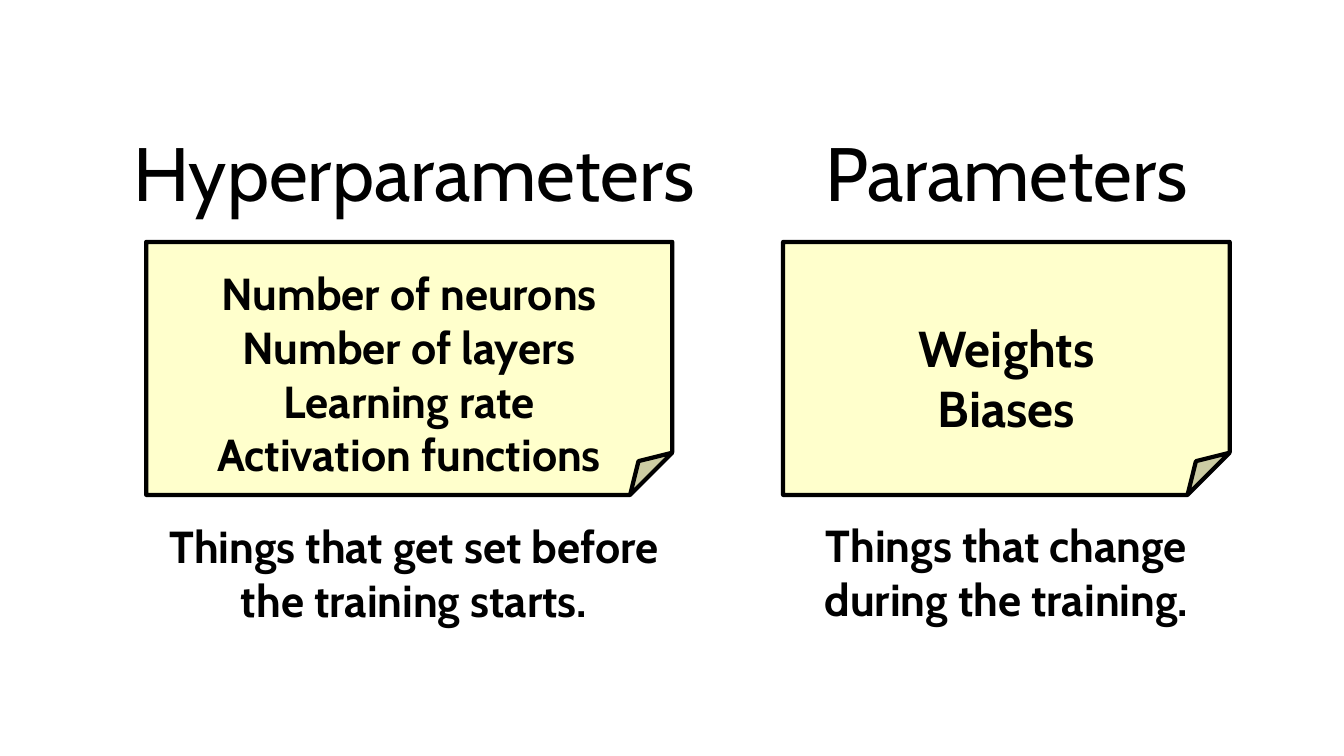
from pptx import Presentation
from pptx.dml.color import RGBColor
from pptx.enum.shapes import MSO_SHAPE
from pptx.enum.text import MSO_ANCHOR, PP_ALIGN
from pptx.util import Pt

COLORS = {"ink": "000000", "note": "FFFFCC"}


class PageBuilder:
    """Draws headings, captions and folded notes on one page in a shared style."""

    def __init__(self, page, font="Cabin"):
        self.page = page
        self.font = font

    def color(self, name):
        return RGBColor.from_string(COLORS[name])

    def add_lines(self, frame, lines, size, bold):
        for index, line in enumerate(lines):
            para = frame.add_paragraph() if index else frame.paragraphs[0]
            para.alignment = PP_ALIGN.CENTER
            span = para.add_run()
            span.text = line
            span.font.name = self.font
            span.font.size = Pt(size)
            span.font.bold = bold
            span.font.color.rgb = self.color("ink")

    def text(self, left, top, width, height, lines, size, bold=False):
        box = self.page.shapes.add_textbox(Pt(left), Pt(top), Pt(width), Pt(height))
        box.text_frame.word_wrap = False
        self.add_lines(box.text_frame, lines, size, bold)

    def note(self, left, top, width, height, lines, size, inset):
        box = self.page.shapes.add_shape(
            MSO_SHAPE.FOLDED_CORNER, Pt(left), Pt(top), Pt(width), Pt(height))
        box.shadow.inherit = False
        box.fill.solid()
        box.fill.fore_color.rgb = self.color("note")
        box.line.color.rgb = self.color("ink")
        box.line.width = Pt(3)
        frame = box.text_frame
        frame.word_wrap = True
        frame.vertical_anchor = MSO_ANCHOR.TOP
        frame.margin_top = Pt(inset)
        frame.margin_bottom = Pt(0)
        self.add_lines(frame, lines, size, True)


def main():
    deck = Presentation()
    deck.slide_width, deck.slide_height = Pt(960), Pt(540)
    builder = PageBuilder(deck.slides.add_slide(deck.slide_layouts[6]))

    builder.text(82.8, 86.4, 426.2, 72.7, ["Hyperparameters"], 54)
    builder.note(104.4, 172.8, 375.8, 180.7,
                 ["Number of neurons", "Number of layers",
                  "Learning rate", "Activation functions"], 32, 17)
    builder.text(104.4, 367.2, 383, 85,
                 ["Things that get set before", "the training starts."], 32, True)

    builder.text(576.7, 86.4, 284.4, 72.7, ["Parameters"], 54)
    builder.note(559.4, 172.8, 319, 180.7, ["Weights", "Biases"], 36, 53.5)
    builder.text(571.7, 366.5, 294.5, 85,
                 ["Things that change", "during the training."], 32, True)

    deck.save("out.pptx")


if __name__ == "__main__":
    main()
